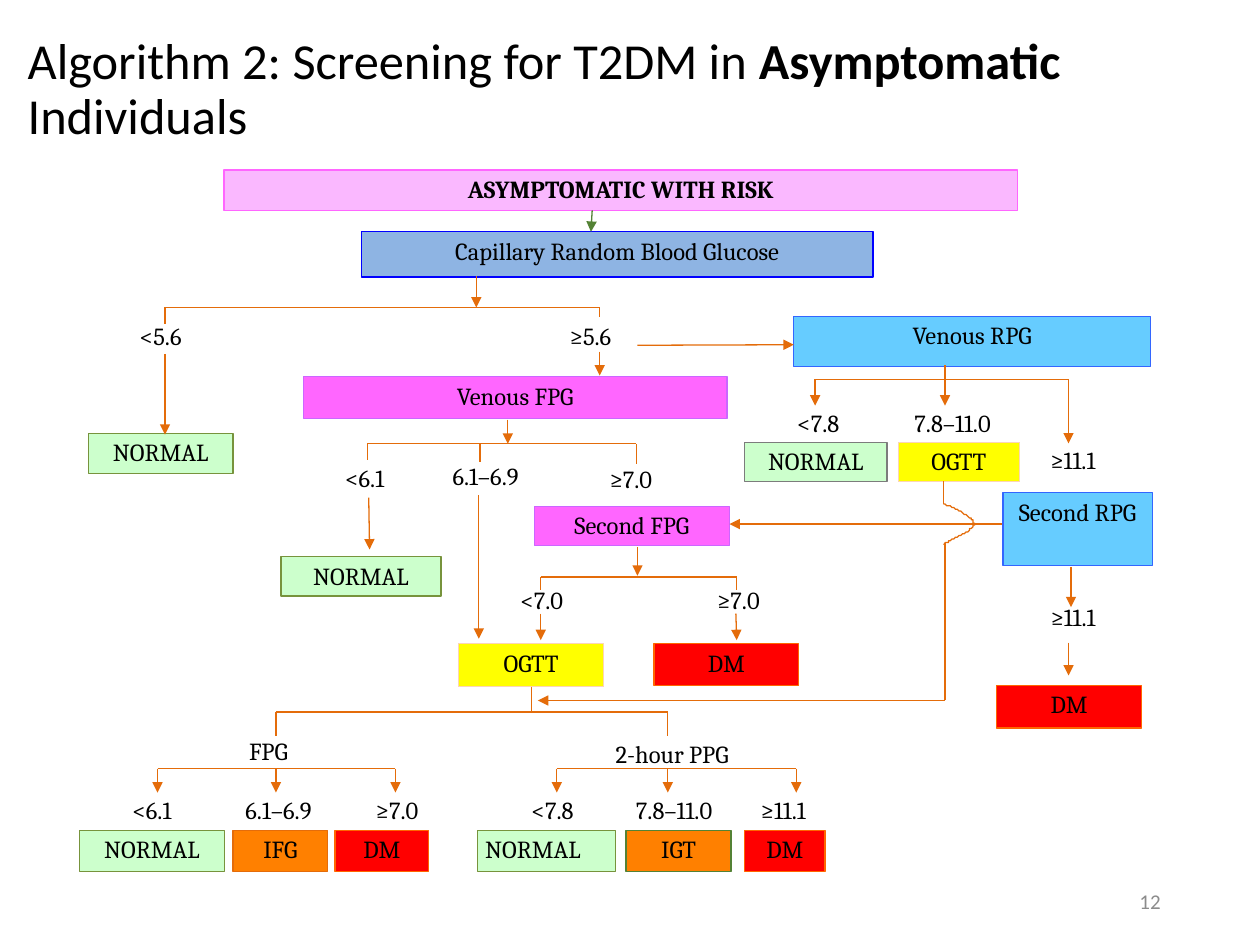
import pptx
import pptx.util
import pptx.dml.color
import pptx.enum.shapes
import pptx.enum.text
import pptx.oxml

Pt = pptx.util.Pt
ALIGN = pptx.enum.text.PP_ALIGN
ANCHOR = pptx.enum.text.MSO_ANCHOR

COLOURS = {
    "black": "000000", "page_number": "8C8C8C", "arrow": "E46C0A",
    "green_line": "548235", "risk": "FAB8FF", "pink": "FF66FF",
    "violet": "CC66FF", "capillary": "8EB4E3", "blue": "0000FF",
    "normal": "CCFFCC", "olive": "77933C", "grey": "7C7C7C",
    "yellow": "FFFF00", "peach": "FCD5B5", "red": "FF0000",
    "red_line": "FF6600", "orange": "FF8000", "sky": "66CCFF",
    "sky_line": "3366FF",
}
NORMAL = ("normal", "olive")
FPG = ("pink", "violet")
RPG = ("sky", "sky_line")
OGTT = ("yellow", "peach")
DM = ("red", "red_line")

# text, (fill, line), left, top, width, height
BOXES = [
    ("ASYMPTOMATIC WITH RISK", ("risk", "pink"), 128, 97.2, 453.6, 23),
    ("Capillary Random Blood Glucose", ("capillary", "blue"), 206.6, 132.5, 292.3, 25.9),
    ("NORMAL", NORMAL, 50.4, 247.7, 82.8, 22.7),
    ("Venous FPG", FPG, 173.5, 215.3, 241.9, 23.8),
    ("NORMAL", NORMAL, 160.6, 318.2, 91.4, 22.5),
    ("Second FPG", FPG, 305.3, 289.4, 111.6, 22.5),
    ("OGTT", OGTT, 262.1, 367.9, 82.8, 24.3),
    ("DM", DM, 373.7, 367.9, 82.8, 23.8),
    ("Venous RPG", RPG, 453.6, 180.7, 203.8, 28.8),
    ("NORMAL", ("normal", "grey"), 425.5, 252.7, 81.4, 22.5),
    ("OGTT", OGTT, 513.4, 252.7, 69.1, 22.5),
    ("Second RPG", RPG, 573.1, 281.5, 85.3, 41.8),
    ("DM", DM, 569.5, 391.7, 82.8, 24.3),
]

# text, (fill, line), left, width
OUTCOMES = [
    ("NORMAL", NORMAL, 45.4, 82.8),
    ("IFG", ("orange", "arrow"), 133.2, 54),
    ("DM", DM, 191.5, 53.5),
    ("NORMAL", NORMAL, 272.9, 79),
    ("IGT", ("orange", "green_line"), 357.8, 60),
    ("DM", DM, 425.5, 46),
]

# text, left, top, width
LABELS = [
    ("≥5.6", 304.6, 181.4, 65.5), ("<5.6", 50.4, 181.4, 82.8),
    ("<6.1", 167, 262.1, 82.8), ("6.1–6.9", 239, 261.4, 77),
    ("≥7.0", 319, 262.8, 82.8),
    ("<7.0", 287.3, 331.9, 44.6), ("≥7.0", 381.6, 331.9, 80.6),
    ("2-hour PPG", 298.8, 419.8, 170.6),
    ("<7.8", 426.2, 231, 82.8), ("7.8–11.0", 499, 231, 90.7),
    ("≥11.1", 586, 252, 54), ("≥11.1", 571.7, 342, 82.8),
    ("<6.1", 45.4, 452.2, 82.8), ("6.1–6.9", 113.8, 452.2, 90.7),
    ("≥7.0", 202.3, 452.2, 49),
    ("<7.8", 274.3, 452.2, 82.8), ("7.8–11.0", 335.5, 452.2, 99.4),
    ("≥11.1", 420.5, 452.2, 54),
]

# bar height, (branch x, branch end) pairs, arrowheads on the branches
FORKS = [
    (175.7, [(94.3, 185), (342.7, 181.4)], False),
    (253.6, [(210, 263), (274.3, 264), (363.6, 265)], False),
    (329.8, [(309, 337), (421, 337)], False),
    (406.8, [(157.7, 420.5), (381.6, 420.5)], False),
    (439.2, [(90, 452.9), (157.7, 452.9), (226, 452.9)], True),
    (439.2, [(318.2, 452.9), (381.6, 452.9), (455, 452.9)], True),
    (216.7, [(465.8, 231.8), (610.6, 253.4)], True),
]

ARROWS = [
    (342.7, 201, 342.7, 214.6), (94.3, 202.3, 94.3, 248.4),
    (210.7, 284.4, 211.2, 314), (273.6, 283, 273.6, 365),
    (309, 350.6, 309, 365.8), (420.5, 350.6, 421, 365.8),
    (272.2, 157.7, 272.2, 175.7), (290.2, 239.8, 290.2, 253.6),
    (364.3, 312.5, 364.3, 329), (364.3, 197.3, 453.6, 197),
    (540, 208.8, 540, 231.8), (572.4, 299.5, 416.9, 299.5),
    (612, 324, 612, 347), (610.6, 367.2, 610.6, 386),
    (540, 400.3, 307.4, 400.3),
]


def rgb(name):
    return pptx.dml.color.RGBColor.from_string(COLOURS[name])


def curve(points, steps=24):
    """Points along a cubic Bezier."""
    for step in range(steps + 1):
        t = step / steps
        weights = ((1 - t) ** 3, 3 * t * (1 - t) ** 2, 3 * t * t * (1 - t), t ** 3)
        yield tuple(sum(w * p[axis] for w, p in zip(weights, points)) for axis in (0, 1))


class Flowchart:
    def __init__(self, page):
        self.page = page
        self.font, self.size, self.weight = "Cambria", 14, 0.75

    def style(self, span, font, size, colour="black", bold=False):
        span.font.name, span.font.size, span.font.bold = font, Pt(size), bold
        span.font.color.rgb = rgb(colour)

    def title(self, parts, left, top, width, height):
        box = self.page.shapes.title
        box.left, box.top, box.width, box.height = map(Pt, (left, top, width, height))
        frame = box.text_frame
        frame.auto_size = pptx.enum.text.MSO_AUTO_SIZE.NONE
        frame.vertical_anchor = ANCHOR.MIDDLE
        para = frame.paragraphs[0]
        para.alignment, para.line_spacing = ALIGN.LEFT, 0.9
        for text, bold in parts:
            span = para.add_run()
            span.text = text
            self.style(span, "Calibri", 28.8, bold=bold)

    def set_text(self, box, text, align=ALIGN.CENTER, bold=False, inset=4.3):
        frame = box.text_frame
        frame.word_wrap = True
        frame.vertical_anchor = ANCHOR.TOP
        frame.margin_left, frame.margin_right = Pt(inset), Pt(4.3)
        frame.margin_top = frame.margin_bottom = Pt(2.2)
        frame.text = text
        para = frame.paragraphs[0]
        para.alignment = align
        self.style(para.runs[0], self.font, self.size, bold=bold)

    def box(self, text, colours, left, top, width, height, **options):
        box = self.page.shapes.add_shape(
            pptx.enum.shapes.MSO_SHAPE.RECTANGLE, *map(Pt, (left, top, width, height)))
        box.shadow.inherit = False
        box.fill.solid()
        box.fill.fore_color.rgb = rgb(colours[0])
        box.line.color.rgb = rgb(colours[1])
        box.line.width = Pt(self.weight)
        self.set_text(box, text, **options)

    def label(self, text, left, top, width, height=22.3, **options):
        box = self.page.shapes.add_textbox(*map(Pt, (left, top, width, height)))
        self.set_text(box, text, **options)

    def page_number(self, text, left, top, width, height):
        box = self.page.shapes.add_textbox(*map(Pt, (left, top, width, height)))
        frame = box.text_frame
        frame.word_wrap = True
        frame.vertical_anchor = ANCHOR.MIDDLE
        frame.text = text
        frame.paragraphs[0].alignment = ALIGN.RIGHT
        self.style(frame.paragraphs[0].runs[0], "Calibri", 12, "page_number")

    def line(self, x1, y1, x2, y2, arrow=False, colour="arrow", weight=None):
        line = self.page.shapes.add_connector(
            pptx.enum.shapes.MSO_CONNECTOR.STRAIGHT, *map(Pt, (x1, y1, x2, y2)))
        line.line.color.rgb = rgb(colour)
        line.line.width = Pt(weight or self.weight)
        if arrow:
            head = pptx.oxml.parse_xml(
                '<a:tailEnd xmlns:a="http://schemas.openxmlformats.org/drawingml/2006/main"'
                ' type="triangle"/>')
            line.line._get_or_add_ln().append(head)
        line._element.spPr.append(pptx.oxml.parse_xml(
            '<a:effectLst xmlns:a="http://schemas.openxmlformats.org/drawingml/2006/main"/>'))

    def fork(self, bar, branches, arrow):
        self.line(branches[0][0], bar, branches[-1][0], bar)
        for x, end in branches:
            self.line(x, bar, x, end, arrow)

    def hop(self, *curves):
        """Curved outline that carries one line over another."""
        first, *rest = [point for points in curves for point in curve(points)]
        builder = self.page.shapes.build_freeform(*first, scale=Pt(1))
        builder.add_line_segments(rest, close=False)
        shape = builder.convert_to_shape()
        shape.shadow.inherit = False
        shape.fill.background()
        shape.line.color.rgb = rgb("arrow")
        shape.line.width = Pt(self.weight)


def main():
    deck = pptx.Presentation()
    deck.slide_width, deck.slide_height = Pt(720), Pt(540)
    chart = Flowchart(deck.slides.add_slide(deck.slide_layouts[5]))
    chart.title([("Algorithm 2: Screening for T2DM in ", False),
                 ("Asymptomatic", True), (" Individuals", False)], 8.6, 15, 702.7, 73.5)
    chart.page_number("12", 508.3, 500.4, 162, 28.8)

    for index, box in enumerate(BOXES):
        chart.box(*box, bold=index == 0)
    for index, (text, colours, left, width) in enumerate(OUTCOMES):
        align = ALIGN.LEFT if index == 3 else ALIGN.CENTER
        chart.box(text, colours, left, 474.5, width, 23.4, align=align)
    for label in LABELS:
        chart.label(*label)
    chart.label("FPG", 85.7, 418.3, 121, align=ALIGN.LEFT, inset=56.6)

    for fork in FORKS:
        chart.fork(*fork)
    for arrow in ARROWS:
        chart.line(*arrow, arrow=True)
    chart.line(338.4, 120.2, 337.7, 132.5, arrow=True, colour="green_line")
    chart.line(303.8, 392.4, 303.8, 406.8)
    chart.line(539.3, 275, 539.3, 288)
    chart.hop([(539.3, 288), (548, 291.6), (556.6, 296), (556.6, 299.5)],
              [(556.6, 299.5), (556.6, 303), (542, 309), (539.3, 311)])
    chart.line(540, 310.3, 540, 400.3, weight=1)
    deck.save("out.pptx")


if __name__ == "__main__":
    main()
